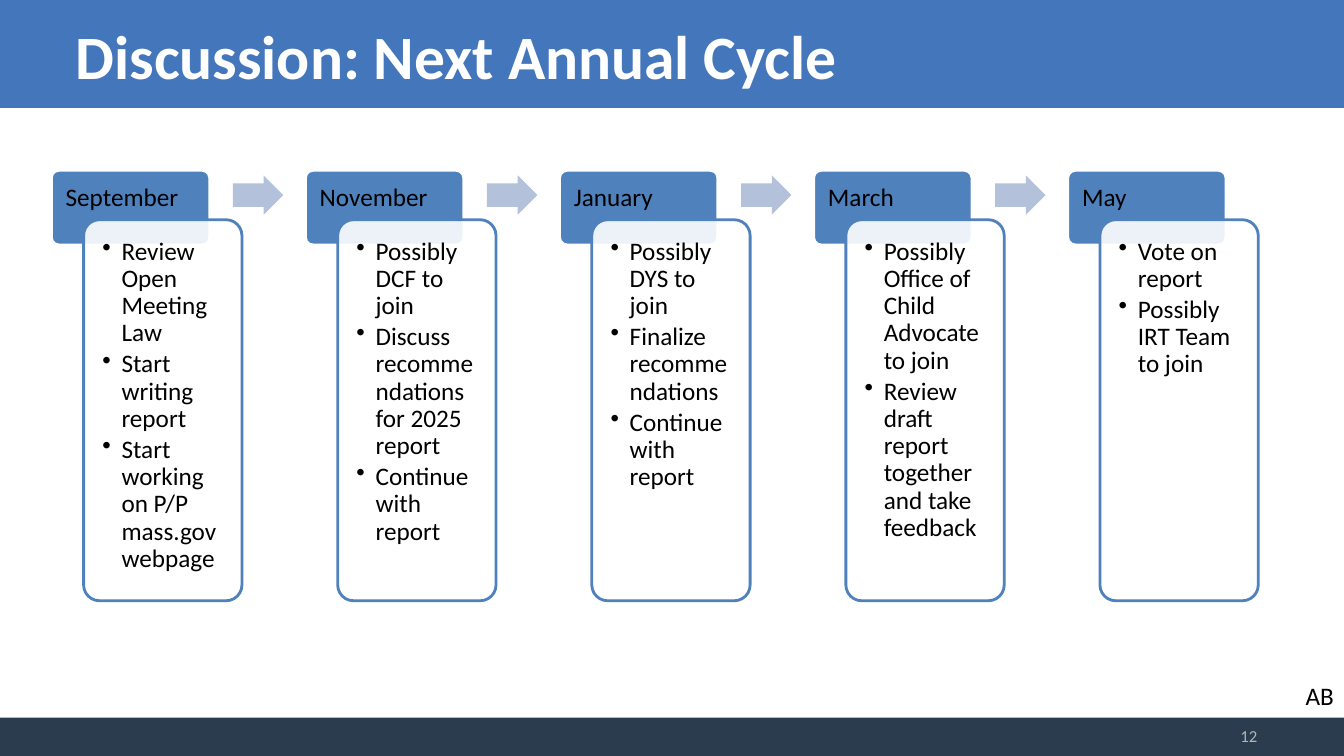
"""Build the slide that sets out the next annual cycle, month by month."""
import lxml.etree
import pptx
import pptx.dml.color
import pptx.enum.shapes
import pptx.enum.text
import pptx.oxml.ns
import pptx.util

INCH = pptx.util.Inches
SHAPE = pptx.enum.shapes.MSO_SHAPE
ALIGN = pptx.enum.text.PP_ALIGN
ANCHOR = pptx.enum.text.MSO_ANCHOR
WIDTH, HEIGHT = 13.33, 7.5
PITCH = 2.52
FIRST_LEFT, MONTH_TOP = 0.51, 1.69
STEP_WIDTH = 1.57
BLUE = "4F81BD"

CYCLE = [
    ("September", ["Review Open Meeting Law", "Start writing report",
                   "Start working on P/P mass.gov webpage"]),
    ("November", ["Possibly DCF to join", "Discuss recommendations for 2025 report",
                  "Continue with report"]),
    ("January", ["Possibly DYS to join", "Finalize recommendations",
                 "Continue with report"]),
    ("March", ["Possibly Office of Child Advocate to join",
               "Review draft report together and take feedback"]),
    ("May", ["Vote on report", "Possibly IRT Team to join"]),
]


def add_block(kind, box, fill, line=None, adjust=()):
    block = slide.shapes.add_shape(kind, *map(INCH, box))
    block.shadow.inherit = False
    block.fill.solid()
    block.fill.fore_color.rgb = pptx.dml.color.RGBColor.from_string(fill)
    if line:
        block.line.color.rgb = pptx.dml.color.RGBColor.from_string(line)
        block.line.width = pptx.util.Pt(2)
    else:
        block.line.fill.background()
    for index, value in enumerate(adjust):
        block.adjustments[index] = value
    return block


def write(holder, lines, size=18, color="000000", bold=False, align=ALIGN.LEFT,
          anchor=ANCHOR.TOP, insets=(0.1, 0.05, 0.1, 0.05), spacing=1.0):
    frame = holder.text_frame
    frame.word_wrap = True
    frame.vertical_anchor = anchor
    (frame.margin_left, frame.margin_top,
     frame.margin_right, frame.margin_bottom) = map(INCH, insets)
    for index, line in enumerate(lines):
        paragraph = frame.paragraphs[0] if index == 0 else frame.add_paragraph()
        paragraph.alignment = align
        paragraph.line_spacing = spacing
        run = paragraph.add_run()
        run.text = line
        run.font.name = "Calibri"
        run.font.size = pptx.util.Pt(size)
        run.font.bold = bold
        run.font.color.rgb = pptx.dml.color.RGBColor.from_string(color)
    return frame.paragraphs


deck = pptx.Presentation()
deck.slide_width, deck.slide_height = INCH(WIDTH), INCH(HEIGHT)
slide = deck.slides.add_slide(deck.slide_layouts[5])

heading = slide.shapes.title
heading.left, heading.top, heading.width, heading.height = map(INCH, (0.65, 0.06, 12, 0.96))
write(heading, ["Discussion: Next Annual Cycle"], 44, "FFFFFF", True, anchor=ANCHOR.MIDDLE)

for top, height, color in [(0, 1.07, "4376BB"), (7.12, 0.38, "2A3C4E")]:
    band = add_block(SHAPE.RECTANGLE, (0, top, WIDTH, height), color)
    heading.element.addprevious(band.element)

for step, (month, tasks) in enumerate(CYCLE):
    left = FIRST_LEFT + step * PITCH
    month_tab = add_block(SHAPE.ROUNDED_RECTANGLE, (left, MONTH_TOP, STEP_WIDTH, 0.74),
                          BLUE, "FFFFFF", [0.1])
    write(month_tab, [month], insets=(0.12, 0.12, 0.12, 0.07), spacing=0.9)

    task_card = add_block(SHAPE.ROUNDED_RECTANGLE, (left + 0.32, 2.18, STEP_WIDTH, 3.78),
                          "FFFFFF", BLUE, [0.1])
    card_color = task_card.fill._xPr.find(".//" + pptx.oxml.ns.qn("a:srgbClr"))
    lxml.etree.SubElement(card_color, pptx.oxml.ns.qn("a:alpha"), val="90000")
    for task in write(task_card, tasks, insets=(0.14,) * 4, spacing=0.9):
        task.space_after = pptx.util.Pt(2.7)
        layout = task._p.get_or_add_pPr()
        layout.set("marL", str(INCH(0.19)))
        layout.set("indent", str(-INCH(0.19)))
        lxml.etree.SubElement(layout, pptx.oxml.ns.qn("a:buChar"), char="•")

    if step < len(CYCLE) - 1:
        add_block(SHAPE.RIGHT_ARROW, (left + 1.8, 1.74, 0.5, 0.39), "B3C1DB",
                  adjust=[0.6, 0.5])

page_number = slide.shapes.add_textbox(*map(INCH, (9.58, 7.1, 2.99, 0.4)))
write(page_number, ["12"], 12, "B5B5B5", align=ALIGN.RIGHT, anchor=ANCHOR.MIDDLE)

initials = slide.shapes.add_textbox(*map(INCH, (12.85, 6.7, 0.48, 0.4)))
write(initials, ["AB"], insets=(0.1, 0.05, 0, 0.05))

deck.save("out.pptx")
